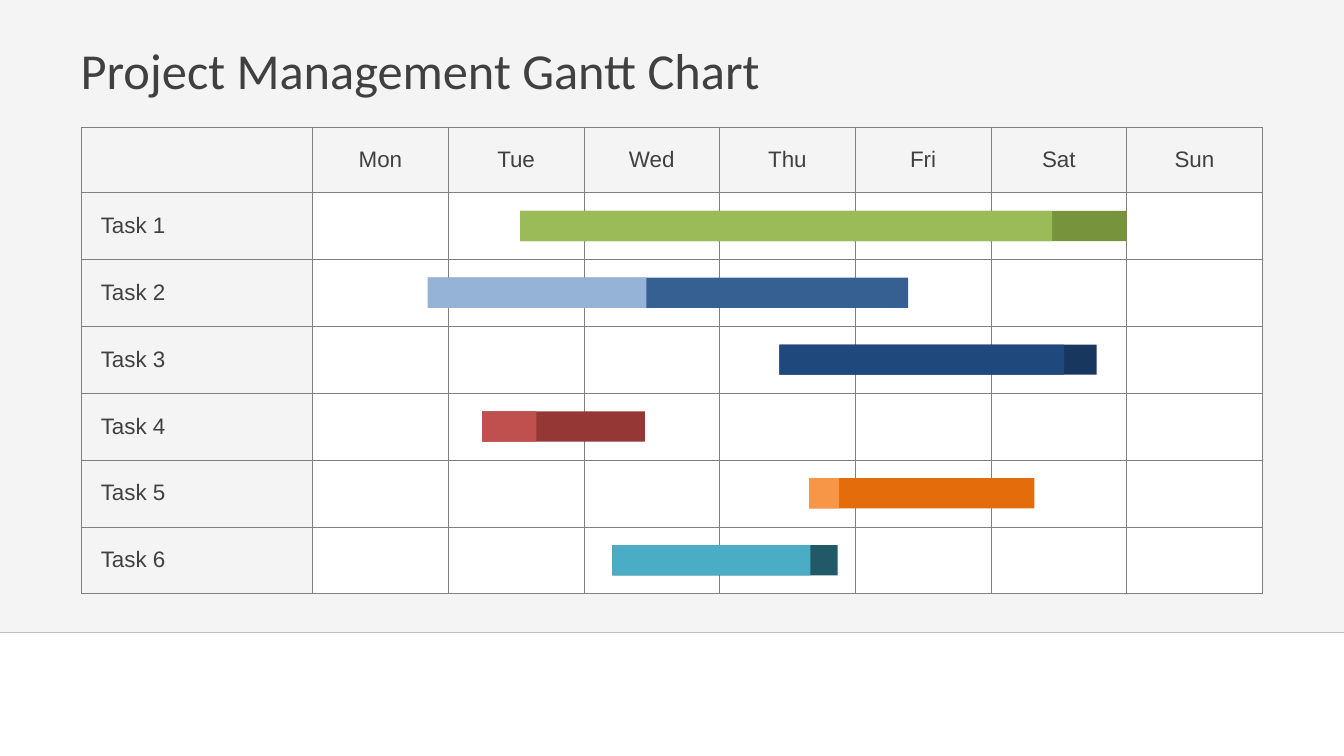
from lxml.etree import SubElement as Sub
from pptx import Presentation
from pptx.dml.color import RGBColor as RGB
from pptx.enum.shapes import MSO_CONNECTOR as LINK, MSO_SHAPE as SHAPE
from pptx.enum.text import MSO_ANCHOR as ANCHOR, PP_ALIGN as ALIGN
from pptx.oxml.ns import qn
from pptx.util import Inches, Pt

WIDE, HIGH = 13.33, 7.5
LEFT, TOP = 0.8, 1.26
NAME, DAY = 2.3, 9.42 / 7
HEAD, ROW = 0.65, 3.98 / 6
THICK = 0.3
PANEL = 6.27

WHITE = RGB(0xFF, 0xFF, 0xFF)
INK = RGB(0x40, 0x40, 0x40)
GRID = RGB(0x80, 0x80, 0x80)
RULE = RGB(0xBF, 0xBF, 0xBF)
SHADE = RGB(0xD9, 0xD9, 0xD9)
MOSS, GREEN = RGB(0x77, 0x93, 0x3C), RGB(0x9B, 0xBB, 0x59)
BLUE, SKY = RGB(0x37, 0x60, 0x92), RGB(0x95, 0xB3, 0xD7)
NIGHT, NAVY = RGB(0x17, 0x37, 0x5E), RGB(0x1F, 0x49, 0x7D)
WINE, RED = RGB(0x95, 0x37, 0x35), RGB(0xC0, 0x50, 0x4D)
RUST, PEACH = RGB(0xE4, 0x6C, 0x0A), RGB(0xF7, 0x96, 0x46)
TEAL, AQUA = RGB(0x21, 0x59, 0x68), RGB(0x4B, 0xAC, 0xC6)

DAYS = ["Mon", "Tue", "Wed", "Thu", "Fri", "Sat", "Sun"]
TASKS = [
    ("Task 1", 1.53, 4.47, 3.92, MOSS, GREEN),
    ("Task 2", 0.85, 3.54, 1.61, BLUE, SKY),
    ("Task 3", 3.44, 2.34, 2.1, NIGHT, NAVY),
    ("Task 4", 1.25, 1.2, 0.4, WINE, RED),
    ("Task 5", 3.66, 1.66, 0.22, RUST, PEACH),
    ("Task 6", 2.21, 1.66, 1.46, TEAL, AQUA),
]


def write(frame, text, size, font, align=ALIGN.LEFT):
    """Add one run of text to the first paragraph of a frame."""
    par = frame.paragraphs[0]
    par.alignment = align
    run = par.add_run()
    run.text = text
    run.font.size = Pt(size)
    run.font.name = font
    run.font.color.rgb = INK


def block(slide, left, top, width, height, color):
    """Draw a plain filled rectangle without an outline."""
    shape = slide.shapes.add_shape(
        SHAPE.RECTANGLE, Inches(left), Inches(top), Inches(width), Inches(height))
    shape.shadow.inherit = False
    shape.fill.solid()
    shape.fill.fore_color.rgb = color
    shape.line.fill.background()
    return shape


def panel(slide):
    """Draw the translucent backdrop."""
    back = block(slide, 0, 0, WIDE, PANEL, SHADE)
    tint = back.fill._xPr.find(qn("a:solidFill")).find(qn("a:srgbClr"))
    Sub(tint, qn("a:alpha"), val="28000")


def rule(slide):
    """Draw the hairline under the backdrop."""
    line = slide.shapes.add_connector(
        LINK.STRAIGHT, 0, Inches(PANEL), Inches(WIDE), Inches(PANEL))
    line.line.color.rgb = RULE
    line.line.width = Pt(0.25)
    Sub(line._element.spPr, qn("a:effectLst"))


def title(slide, text):
    """Place the slide title."""
    box = slide.shapes.add_textbox(
        Inches(0.67), Inches(0.3), Inches(WIDE * 0.9), Inches(0.78))
    frame = box.text_frame
    frame.word_wrap = True
    frame.vertical_anchor = ANCHOR.MIDDLE
    frame.margin_left = frame.margin_right = Inches(0.13)
    frame.margin_top = frame.margin_bottom = Inches(0.07)
    write(frame, text, 36, "Calibri")


def edge(cell):
    """Give a cell thin grey borders on all four sides."""
    props = cell._tc.get_or_add_tcPr()
    for spot, side in enumerate(("lnL", "lnR", "lnT", "lnB")):
        line = props.makeelement(qn(f"a:{side}"), {"w": str(Pt(0.25))})
        fill = Sub(line, qn("a:solidFill"))
        Sub(fill, qn("a:srgbClr"), val=str(GRID))
        props.insert(spot, line)


def table(slide):
    """Build the week grid with day and task labels."""
    rows, cols = len(TASKS) + 1, len(DAYS) + 1
    grid = slide.shapes.add_table(
        rows, cols, Inches(LEFT), Inches(TOP),
        Inches(NAME + DAY * len(DAYS)), Inches(HEAD + ROW * len(TASKS))).table
    grid.first_row = grid.horz_banding = False
    for c, col in enumerate(grid.columns):
        col.width = Inches(DAY if c else NAME)
    for r, row in enumerate(grid.rows):
        row.height = Inches(ROW if r else HEAD)
        for c, cell in enumerate(row.cells):
            cell.vertical_anchor = ANCHOR.MIDDLE
            if r and c:
                cell.fill.solid()
                cell.fill.fore_color.rgb = WHITE
            else:
                cell.fill.background()
            edge(cell)
            if r and not c:
                cell.margin_left = Inches(0.2)
                write(cell.text_frame, TASKS[r - 1][0], 16, "Arial")
            elif c and not r:
                write(cell.text_frame, DAYS[c - 1], 16, "Arial", ALIGN.CENTER)


def bar(slide, row, start, span, done, dark, light):
    """Draw a task bar, in days, with its done part on top."""
    left = LEFT + NAME + start * DAY
    top = TOP + HEAD + row * ROW + (ROW - THICK) / 2
    for days, color in ((span, dark), (done, light)):
        block(slide, left, top, days * DAY, THICK, color)


def main():
    """Build and save the slide."""
    deck = Presentation()
    deck.slide_width, deck.slide_height = Inches(WIDE), Inches(HIGH)
    slide = deck.slides.add_slide(deck.slide_layouts[6])
    panel(slide)
    title(slide, "Project Management Gantt Chart")
    rule(slide)
    table(slide)
    for row, (_, *plan) in enumerate(TASKS):
        bar(slide, row, *plan)
    deck.save("out.pptx")


if __name__ == "__main__":
    main()
